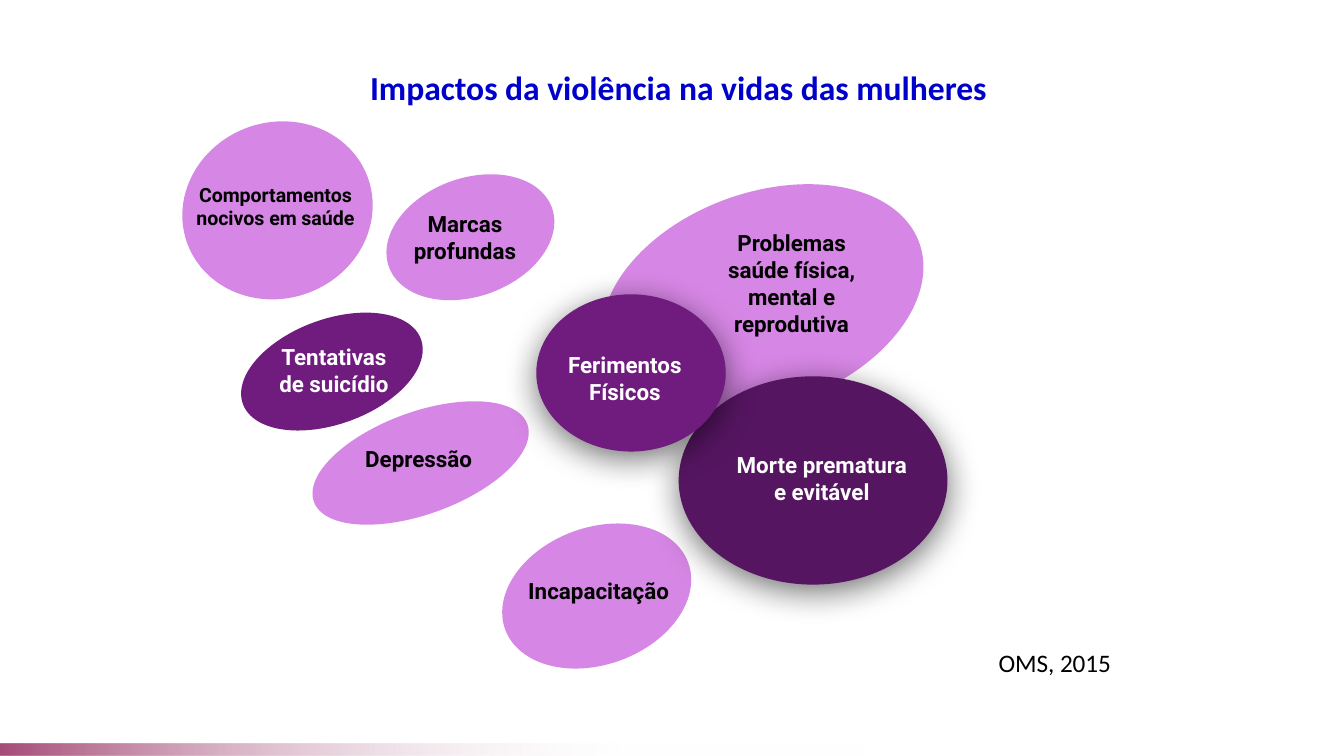
from lxml import etree
from pptx import Presentation
from pptx.dml.color import RGBColor
from pptx.enum.shapes import MSO_SHAPE
from pptx.enum.text import MSO_ANCHOR, PP_ALIGN
from pptx.oxml import parse_xml
from pptx.oxml.ns import nsdecls, qn
from pptx.util import Inches, Pt

RECTANGLE, OVAL = MSO_SHAPE.RECTANGLE, MSO_SHAPE.OVAL
TOP, MIDDLE = MSO_ANCHOR.TOP, MSO_ANCHOR.MIDDLE
LEFT, CENTER = PP_ALIGN.LEFT, PP_ALIGN.CENTER

COLORS = {
    "white": "FFFFFF",
    "black": "000000",
    "title": "0000CC",
    "lilac": "D686E4",
    "purple": "701C7F",
    "plum": "551561",
    "rose": "A64D79",
}

IMPACTS = [
    ("Incapacitação", (2.57, 2.86, 1.02, 1.45), 250, "lilac",
     (2.46, 3.16, 1.27, 0.77), "black", 12, False),
    ("Comportamentos nocivos em saúde", (0.05, 0, 1.31, 1.43), 250, "lilac",
     (0, 0.3, 1.38, 0.77), "black", 10.5, False),
    ("Depressão", (1.39, 1.75, 0.76, 1.69), 250, "lilac",
     (1.18, 2.18, 1.15, 0.77), "black", 12, False),
    ("Problemas saúde física, mental e reprodutiva", (3.52, 0.14, 1.59, 2.48), 250, "lilac",
     (3.89, 0.87, 1.28, 0.77), "black", 12, False),
    ("Tentativas de suicídio", (0.72, 1.21, 0.78, 1.41), 250, "purple",
     (0.59, 1.68, 1.07, 0.45), "white", 12, False),
    ("Marcas profundas", (1.7, 0.27, 0.88, 1.29), 250, "lilac",
     (1.48, 0.53, 1.24, 0.77), "black", 12, False),
    ("Morte prematura e evitável", (3.69, 1.95, 2, 1.55), 0, "plum",
     (3.99, 2.43, 1.53, 0.56), "white", 12, True),
    ("Ferimentos Físicos", (2.63, 1.34, 1.41, 1.17), 0, "purple",
     (2.69, 1.58, 1.2, 0.77), "white", 12, True),
]


def rgb(name):
    return RGBColor.from_string(COLORS[name])


def shift(area, offset):
    left, top, width, height = offset
    return area[0] + left, area[1] + top, width, height


def add_text(page, area, text, size, color, font="Roboto", bold=True,
             align=CENTER, anchor=MIDDLE):
    frame = page.shapes.add_textbox(*map(Inches, area)).text_frame
    frame.word_wrap = True
    frame.vertical_anchor = anchor
    frame.margin_left = frame.margin_right = Inches(0.07)
    frame.margin_top = frame.margin_bottom = Inches(0.07)
    para = frame.paragraphs[0]
    para.alignment = align
    span = para.add_run()
    span.text = text
    span.font.name = font
    span.font.size = Pt(size)
    span.font.bold = bold
    span.font.color.rgb = rgb(color)


def add_plain_shape(page, kind, area):
    shape = page.shapes.add_shape(kind, *map(Inches, area))
    shape.shadow.inherit = False
    shape.line.fill.background()
    return shape


def add_shadow(shape):
    effects = shape._element.spPr.find(qn("a:effectLst"))
    shadow = etree.SubElement(effects, qn("a:outerShdw"), blurRad=str(Pt(18)),
                              dist=str(Pt(4)), dir="5400000", algn="bl", rotWithShape="0")
    color = etree.SubElement(shadow, qn("a:srgbClr"), val=COLORS["black"])
    etree.SubElement(color, qn("a:alpha"), val="55000")


def add_footer_band(page, area):
    band = add_plain_shape(page, RECTANGLE, area)
    band.fill.background()
    properties = band._element.spPr
    gradient = parse_xml(
        f'<a:gradFill {nsdecls("a")}><a:gsLst>'
        f'<a:gs pos="0"><a:srgbClr val="{COLORS["white"]}"/></a:gs>'
        f'<a:gs pos="24000"><a:srgbClr val="{COLORS["white"]}"><a:alpha val="0"/></a:srgbClr></a:gs>'
        f'<a:gs pos="100000"><a:srgbClr val="{COLORS["rose"]}"/></a:gs>'
        '</a:gsLst><a:lin ang="10800000" scaled="0"/></a:gradFill>')
    properties.replace(properties.find(qn("a:noFill")), gradient)


def add_impact_map(page, area):
    for text, bubble_box, rotation, fill, label_box, color, size, shadowed in IMPACTS:
        bubble = add_plain_shape(page, OVAL, shift(area, bubble_box))
        bubble.rotation = rotation
        bubble.fill.solid()
        bubble.fill.fore_color.rgb = rgb(fill)
        if shadowed:
            add_shadow(bubble)
        add_text(page, shift(area, label_box), text, size, color)
    add_text(page, shift(area, (6, 3.9, 1.28, 0.4)), "OMS, 2015", 13.5, "black",
             font="Calibri", bold=False, align=LEFT, anchor=TOP)


def main():
    deck = Presentation()
    deck.slide_width = Inches(10)
    deck.slide_height = deck.slide_width * 9 // 16
    page = deck.slides.add_slide(deck.slide_layouts[6])
    add_footer_band(page, (0, 5.53, 6.42, 0.09))
    add_text(page, (1.64, 0.22, 6.82, 0.85), "Impactos da violência na vidas das mulheres",
             18, "title", font="Calibri")
    add_impact_map(page, (1.36, 0.85, 7.28, 4.31))
    deck.save("out.pptx")


if __name__ == "__main__":
    main()
